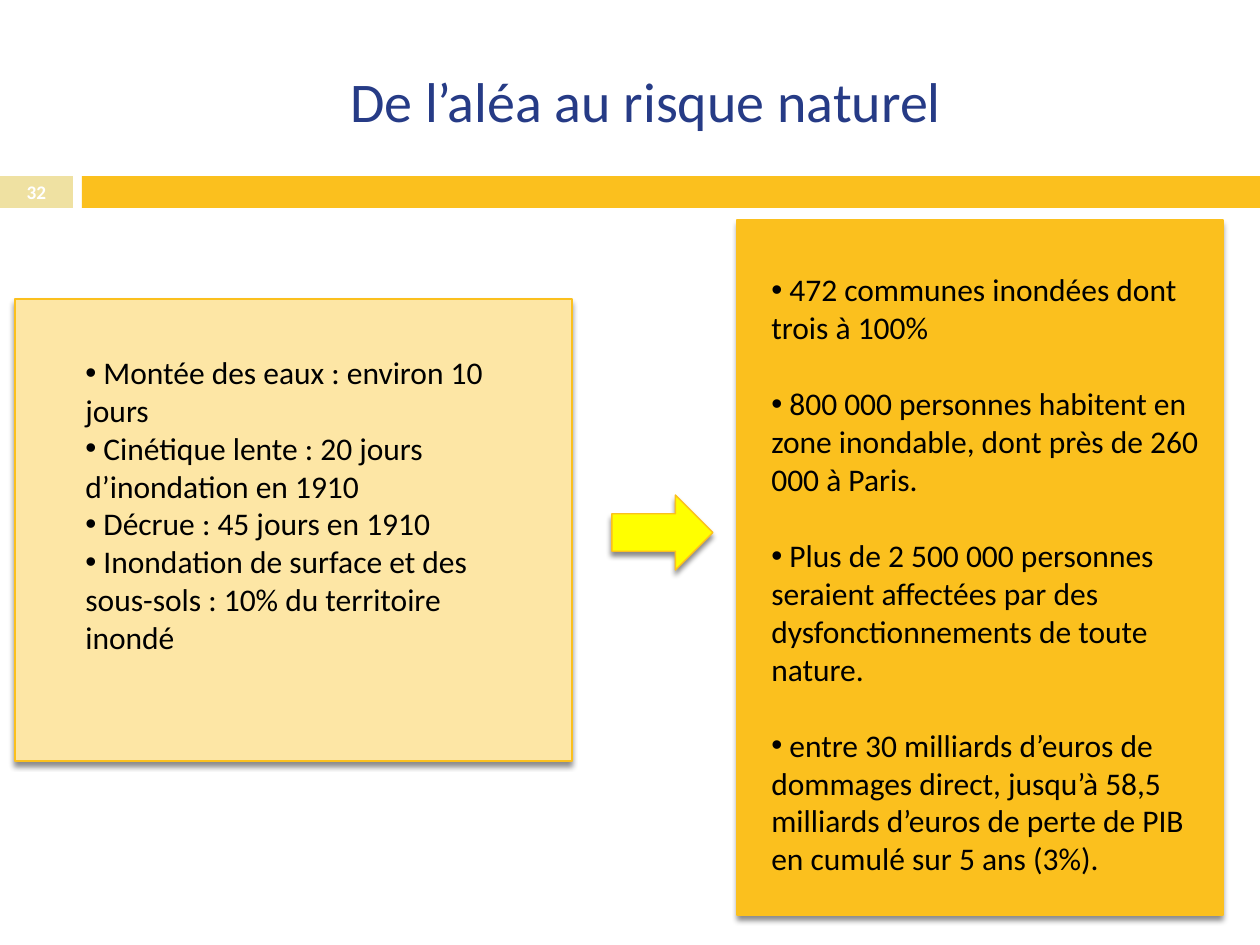
from lxml import etree
from pptx import Presentation
from pptx.dml.color import RGBColor
from pptx.enum.shapes import MSO_SHAPE
from pptx.enum.text import MSO_ANCHOR, PP_ALIGN
from pptx.oxml import parse_xml
from pptx.oxml.ns import nsdecls, qn
from pptx.util import Pt

RECT, ARROW = MSO_SHAPE.RECTANGLE, MSO_SHAPE.RIGHT_ARROW
TOP, MIDDLE = MSO_ANCHOR.TOP, MSO_ANCHOR.MIDDLE
LEFT, CENTER = PP_ALIGN.LEFT, PP_ALIGN.CENTER
PX = 914400 / 126
COLORS = {
    "title": "263B86",
    "text": "000000",
    "number": "FFFFFF",
    "tab": "EFE1A2",
    "gold": "FBC01E",
    "cream": "FDE6A5",
    "yellow": "FFFF00",
}
BODY = {"name": "Calibri", "size": Pt(18)}
TITLE = {"name": "Calibri", "size": Pt(32)}
NUMBER = {"name": "Calibri", "size": Pt(11), "bold": True}

HAZARD = [
    "Montée des eaux : environ 10 jours",
    "Cinétique lente : 20 jours d’inondation en 1910",
    "Décrue : 45 jours en 1910",
    "Inondation de surface et des sous-sols : 10% du territoire inondé",
]
RISK = [
    "472 communes inondées dont trois à 100%",
    "800 000 personnes habitent en zone inondable, dont près de 260 000 à Paris.",
    "Plus de 2 500 000 personnes seraient affectées par des dysfonctionnements de toute nature.",
    "entre 30 milliards d’euros de dommages direct, jusqu’à 58,5 milliards d’euros de perte de PIB en cumulé sur 5 ans (3%).",
]


def emu(box):
    return [round(v * PX) for v in box]


def rgb(name):
    return RGBColor.from_string(COLORS[name])


def add_shadow(sp):
    sp._element.spPr.append(parse_xml(
        f'<a:effectLst {nsdecls("a")}>'
        '<a:outerShdw blurRad="38100" dist="30480" dir="5400000" rotWithShape="0">'
        '<a:srgbClr val="000000"><a:alpha val="45000"/></a:srgbClr>'
        '</a:outerShdw></a:effectLst>'))


def add_block(s, box, fill, kind=RECT, raised=False):
    sp = s.shapes.add_shape(kind, *emu(box))
    sp.fill.solid()
    sp.fill.fore_color.rgb = rgb(fill)
    if raised:
        sp.line.color.rgb = rgb("gold")
        sp.line.width = Pt(0.79)
        add_shadow(sp)
    else:
        sp.line.fill.background()
        sp.shadow.inherit = False
    return sp


def add_text(s, box, lines, font, color, align=LEFT, anchor=TOP, gap=0, bullet=False):
    tf = s.shapes.add_textbox(*emu(box)).text_frame
    tf.word_wrap = True
    tf.vertical_anchor = anchor
    for i, line in enumerate(lines):
        p = tf.paragraphs[0] if i == 0 else tf.add_paragraph()
        p.alignment = align
        p.space_before = Pt(gap if i else 0)
        if bullet:
            pPr = p._p.get_or_add_pPr()
            etree.SubElement(pPr, qn("a:buFont")).set("typeface", "Arial")
            etree.SubElement(pPr, qn("a:buChar")).set("char", "•")
        r = p.add_run()
        r.text = f" {line}" if bullet else line
        for key, value in font.items():
            setattr(r.font, key, value)
        r.font.color.rgb = rgb(color)


def add_header(s, box, title, number):
    x, y, w, h = box
    band_y, band_h, tab_w, bar_x = y + 176, 32, 73, x + 82
    add_block(s, (x, band_y, tab_w, band_h), "tab")
    add_block(s, (bar_x, band_y, x + w - bar_x, band_h), "gold")
    add_text(s, (x, band_y, tab_w, band_h), [number], NUMBER, "number", CENTER, MIDDLE)
    add_text(s, (x + 84, y + 32, 1124, 136), [title], TITLE, "title", CENTER, MIDDLE)


def add_panel(s, box, fill, inset, lines, gap=0):
    x, y, w, h = box
    dx, dy, text_w, text_h = inset
    add_block(s, box, fill, raised=True)
    add_text(s, (x + dx, y + dy, text_w, text_h), lines, BODY, "text", gap=gap, bullet=True)


def main():
    prs = Presentation()
    prs.slide_width, prs.slide_height = emu((1260, 945))
    s = prs.slides.add_slide(prs.slide_layouts[6])
    add_header(s, (0, 0, 1260, 208), "De l’aléa au risque naturel", "32")
    add_panel(s, (15, 299, 557, 462), "cream", (58, 48, 454, 357), HAZARD)
    add_panel(s, (737, 220, 486, 695), "gold", (22, 44, 454, 624), RISK, gap=22)
    add_block(s, (612, 495, 101, 75), "yellow", ARROW, raised=True)
    prs.save("out.pptx")


if __name__ == "__main__":
    main()
